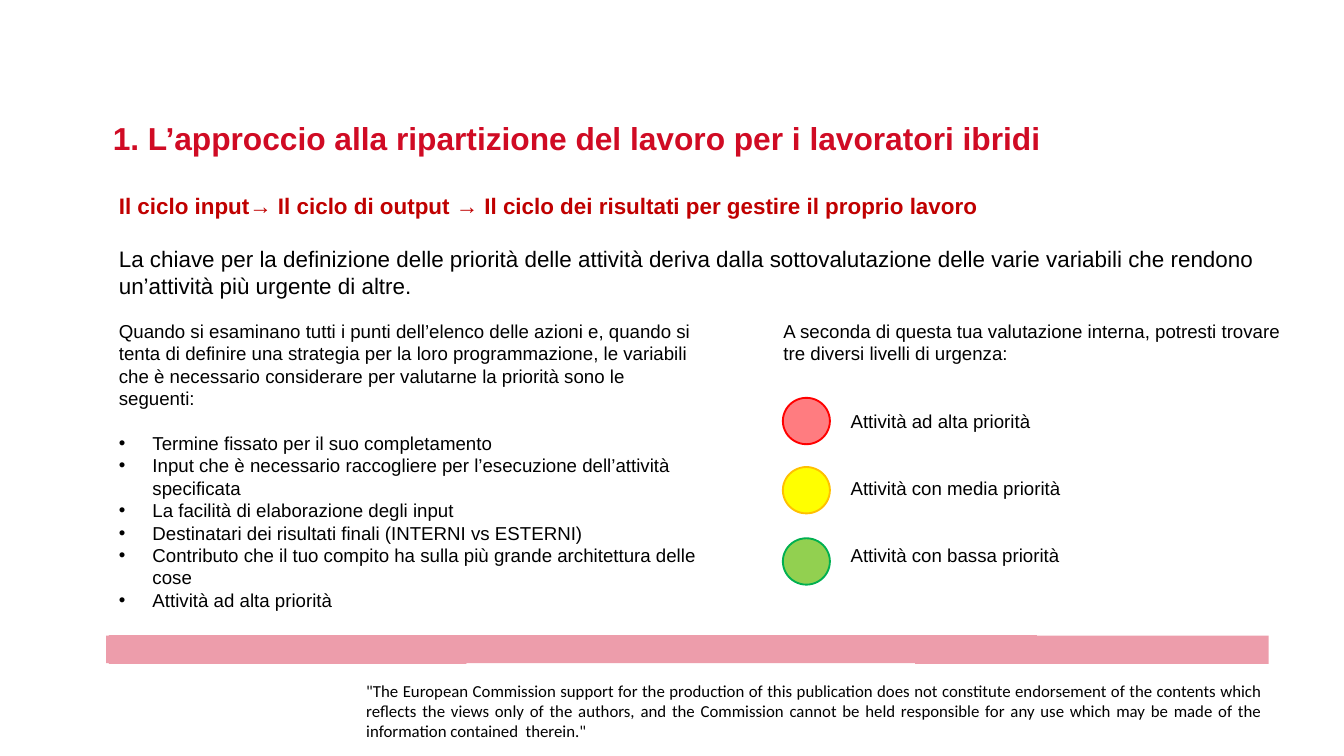
from dataclasses import dataclass

from lxml.etree import SubElement
from pptx import Presentation
from pptx.dml.color import RGBColor
from pptx.enum.shapes import MSO_SHAPE
from pptx.enum.text import MSO_AUTO_SIZE, PP_ALIGN
from pptx.oxml.ns import qn
from pptx.util import Inches, Pt


@dataclass(frozen=True)
class Theme:
    sans: str = "Arial"
    note: str = "Calibri"
    black: str = "000000"
    title: str = "D00B24"
    cycle: str = "C00000"
    band: str = "ED9DAB"
    head: int = 34
    lead: int = 24
    body: int = 20
    small: int = 18


@dataclass(frozen=True)
class Box:
    left: float
    top: float
    width: float
    height: float


@dataclass(frozen=True)
class Level:
    label: str
    top: float
    fill: str
    line: str


THEME = Theme()

POINTS = [
    "Termine fissato per il suo completamento",
    "Input che è necessario raccogliere per l’esecuzione dell’attività specificata",
    "La facilità di elaborazione degli input",
    "Destinatari dei risultati finali (INTERNI vs ESTERNI)",
    "Contributo che il tuo compito ha sulla più grande architettura delle cose",
    "Attività ad alta priorità",
]

LEVELS = [
    Level("Attività ad alta priorità", 5.92, "FF7C80", "FF0000"),
    Level("Attività con media priorità", 6.95, "FFFF00", "FFC000"),
    Level("Attività con bassa priorità", 8.01, "92D050", "00B050"),
]

EDGE = [
    (18.88, 9.46), (15.43, 9.46), (15.43, 9.45), (10.17, 9.45),
    (1.62, 9.45), (1.62, 9.46), (1.58, 9.46), (1.58, 9.87),
    (1.62, 9.87), (1.62, 9.88), (6.94, 9.88), (6.94, 9.87),
    (13.62, 9.87), (13.62, 9.88), (18.88, 9.88),
]


def color(code: str) -> RGBColor:
    return RGBColor.from_string(code)


def add_frame(slide, box: Box, inset: bool = True):
    shape = slide.shapes.add_textbox(
        Inches(box.left), Inches(box.top), Inches(box.width), Inches(box.height)
    )
    frame = shape.text_frame
    frame.word_wrap = True
    frame.auto_size = MSO_AUTO_SIZE.SHAPE_TO_FIT_TEXT
    frame.margin_left = frame.margin_right = Inches(0.1 if inset else 0)
    frame.margin_top = frame.margin_bottom = Inches(0.05 if inset else 0)
    return frame


def write(frame, text: str, *, size: int = THEME.body, font: str = THEME.sans,
          ink: str = THEME.black, bold: bool = False, gap: float = 0,
          align=PP_ALIGN.LEFT, pitch: float | None = None,
          bullet: bool = False, tab: float | None = None) -> None:
    first = frame.paragraphs[0]
    para = frame.add_paragraph() if first.runs else first
    para.alignment = align
    if gap:
        para.space_before = Pt(gap)
    if pitch:
        para.line_spacing = pitch
    props = para._p.get_or_add_pPr()
    if bullet:
        props.set("marL", str(Inches(0.5)))
        props.set("indent", str(-Inches(0.5)))
        SubElement(props, qn("a:buFont"), typeface=THEME.sans)
        SubElement(props, qn("a:buChar"), char="•")
    if tab:
        stops = SubElement(props, qn("a:tabLst"))
        SubElement(stops, qn("a:tab"), pos=str(Inches(tab)), algn="l")
    run = para.add_run()
    run.text = text
    run.font.size = Pt(size)
    run.font.name = font
    run.font.bold = bold
    run.font.color.rgb = color(ink)


def draw_band(slide) -> None:
    points = [(Inches(x), Inches(y)) for x, y in EDGE]
    maker = slide.shapes.build_freeform(*points[0])
    maker.add_line_segments(points[1:], close=True)
    band = maker.convert_to_shape()
    band.shadow.inherit = False
    band.fill.solid()
    band.fill.fore_color.rgb = color(THEME.band)
    band.line.fill.background()


def draw_dot(slide, level: Level) -> None:
    dot = slide.shapes.add_shape(
        MSO_SHAPE.OVAL, Inches(11.65), Inches(level.top), Inches(0.7), Inches(0.69)
    )
    dot.shadow.inherit = False
    dot.fill.solid()
    dot.fill.fore_color.rgb = color(level.fill)
    dot.line.color.rgb = color(level.line)
    dot.line.width = Pt(2)


def main() -> None:
    deck = Presentation()
    deck.slide_width = Inches(20)
    deck.slide_height = Inches(11.25)
    slide = deck.slides.add_slide(deck.slide_layouts[6])

    draw_band(slide)
    note = add_frame(slide, Box(5.45, 10.15, 13.33, 0.76), inset=False)
    write(
        note,
        '"The European Commission support for the production of this publication '
        "does not constitute endorsement of the contents which reflects the views "
        "only of the authors, and the Commission cannot be held responsible for any "
        'use which may be made of the information contained  therein."',
        size=THEME.small, font=THEME.note, align=PP_ALIGN.JUSTIFY, pitch=0.98,
    )

    title = add_frame(slide, Box(1.58, 1.72, 15.13, 0.67))
    write(title, "1. L’approccio alla ripartizione del lavoro per i lavoratori ibridi",
          size=THEME.head, ink=THEME.title, bold=True)

    lead = add_frame(slide, Box(1.67, 2.81, 17.11, 1.72))
    write(lead, "Il ciclo input→ Il ciclo di output → Il ciclo dei risultati "
          "per gestire il proprio lavoro",
          size=THEME.lead, ink=THEME.cycle, bold=True)
    write(lead, "La chiave per la definizione delle priorità delle attività deriva "
          "dalla sottovalutazione delle varie variabili che rendono "
          "un’attività più urgente di altre.",
          size=THEME.lead, gap=28)

    left = add_frame(slide, Box(1.67, 4.71, 8.82, 4.48))
    write(left, "Quando si esaminano tutti i punti dell’elenco delle azioni e, quando "
          "si tenta di definire una strategia per la loro programmazione, le "
          "variabili che è necessario considerare per valutarne la priorità "
          "sono le seguenti:")
    for rank, point in enumerate(POINTS):
        write(left, point, gap=0 if rank else 24, bullet=True)

    right = add_frame(slide, Box(11.56, 4.71, 7.67, 3.8))
    write(right, "A seconda di questa tua valutazione interna, potresti trovare "
          "tre diversi livelli di urgenza:")
    for level in LEVELS:
        write(right, "\t" + level.label, gap=48, tab=1)
        draw_dot(slide, level)

    deck.save("out.pptx")


if __name__ == "__main__":
    main()
